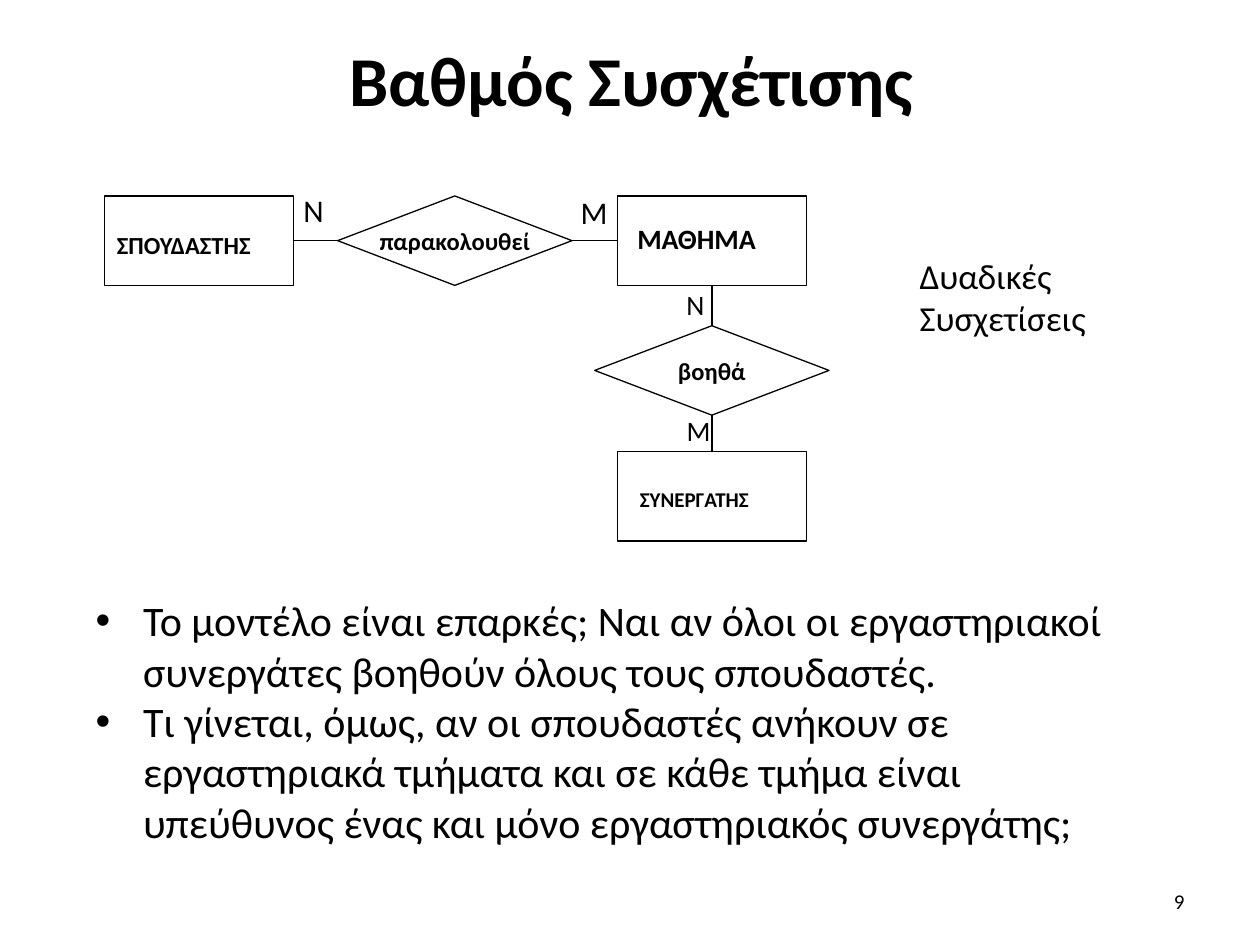
from lxml import etree
from pptx import Presentation
from pptx.dml.color import RGBColor
from pptx.enum.shapes import MSO_CONNECTOR, MSO_SHAPE
from pptx.enum.text import MSO_ANCHOR, MSO_AUTO_SIZE, PP_ALIGN
from pptx.oxml.ns import qn
from pptx.util import Inches, Pt

BLACK = RGBColor(0x00, 0x00, 0x00)
RECT, DIAMOND = MSO_SHAPE.RECTANGLE, MSO_SHAPE.DIAMOND
STRAIGHT = MSO_CONNECTOR.STRAIGHT
LEFT, CENTER, RIGHT = PP_ALIGN.LEFT, PP_ALIGN.CENTER, PP_ALIGN.RIGHT
TOP, MIDDLE = MSO_ANCHOR.TOP, MSO_ANCHOR.MIDDLE
NO_FIT = MSO_AUTO_SIZE.NONE
SITE_TOP, SITE_LEFT, SITE_BOTTOM, SITE_RIGHT = range(4)

# The slide is a grid of 100 columns by 75 rows
COLS, ROWS = 100, 75
ENTITY = (15, 7.1)
RELATION = (18.6, 7.1)


class Deck:
    font = "Calibri"
    line_width = Pt(0.75)

    def __init__(self, prs):
        self.col = prs.slide_width / COLS
        self.row = prs.slide_height / ROWS
        self.s = prs.slides.add_slide(prs.slide_layouts[1])

    def box(self, x, y, w, h):
        return (round(x * self.col), round(y * self.row),
                round(w * self.col), round(h * self.row))

    def fill_text(self, sp, lines, size, bold=False, align=LEFT, anchor=TOP, wrap=True):
        tf = sp.text_frame
        tf.auto_size = NO_FIT
        tf.word_wrap = wrap
        tf.vertical_anchor = anchor
        for i, line in enumerate(lines):
            p = tf.add_paragraph() if i else tf.paragraphs[0]
            p.alignment = align
            p.space_before = Pt(0)
            r = p.add_run()
            r.text = line
            r.font.name = self.font
            r.font.size = Pt(size)
            r.font.bold = bold
            r.font.color.rgb = BLACK

    def placeholder(self, idx, area, lines, size, **style):
        sp = self.s.placeholders[idx]
        sp.left, sp.top, sp.width, sp.height = self.box(*area)
        self.fill_text(sp, lines, size, **style)

    def text(self, area, lines, size, **style):
        sp = self.s.shapes.add_textbox(*self.box(*area))
        self.fill_text(sp, lines, size, **style)

    def outline(self, kind, cx, cy, size):
        w, h = size
        sp = self.s.shapes.add_shape(kind, *self.box(cx - w / 2, cy - h / 2, w, h))
        sp.shadow.inherit = False
        sp.fill.background()
        sp.line.color.rgb = BLACK
        sp.line.width = self.line_width
        return sp

    def entity(self, cx, cy, name, size, area):
        sp = self.outline(RECT, cx, cy, ENTITY)
        self.text(area, [name], size, bold=True, wrap=False)
        return sp

    def relation(self, cx, cy, name):
        sp = self.outline(DIAMOND, cx, cy, RELATION)
        self.fill_text(sp, [name], 14, bold=True, align=CENTER, anchor=MIDDLE, wrap=False)
        return sp

    def link(self, start, start_site, end, end_site):
        c = self.s.shapes.add_connector(STRAIGHT, 0, 0, 0, 0)
        c.begin_connect(start, start_site)
        c.end_connect(end, end_site)
        c.line.color.rgb = BLACK
        c.line.width = self.line_width
        etree.SubElement(c._element.spPr, qn("a:effectLst"))


def main():
    prs = Presentation()
    prs.slide_width, prs.slide_height = Inches(10), Inches(7.5)
    d = Deck(prs)

    # Title and list
    d.placeholder(0, (5.1, 1.3, 90, 9.9), ["Βαθμός Συσχέτισης"], 40,
                  bold=True, align=CENTER, anchor=MIDDLE)
    d.placeholder(1, (6.6, 46.7, 85, 23.3), [
        "Το μοντέλο είναι επαρκές; Ναι αν όλοι οι εργαστηριακοί "
        "συνεργάτες βοηθούν όλους τους σπουδαστές.",
        "Τι γίνεται, όμως, αν οι σπουδαστές ανήκουν σε εργαστηριακά "
        "τμήματα και σε κάθε τμήμα είναι υπεύθυνος ένας και μόνο "
        "εργαστηριακός συνεργάτης;"], 24)

    # Entities and relations share one horizontal and one vertical axis
    axis_x, axis_y = 56.5, 19.1
    student = d.entity(15.8, axis_y, "ΣΠΟΥΔΑΣΤΗΣ", 14, (8.3, 17.8, 13.5, 4.1))
    course = d.entity(axis_x, axis_y, "ΜΑΘΗΜΑ", 16, (49.6, 17.1, 12.3, 4.5))
    assistant = d.entity(axis_x, 39.4, "ΣΥΝΕΡΓΑΤΗΣ", 12, (49.8, 38.1, 11.4, 3.7))
    attends = d.relation(36.1, axis_y, "παρακολουθεί")
    helps = d.relation(axis_x, 29.4, "βοηθά")

    # Links
    d.link(attends, SITE_LEFT, student, SITE_RIGHT)
    d.link(course, SITE_LEFT, attends, SITE_RIGHT)
    d.link(helps, SITE_TOP, course, SITE_BOTTOM)
    d.link(assistant, SITE_TOP, helps, SITE_BOTTOM)

    # Cardinalities
    for x, y, w, h, mark, size in [(23.1, 14.7, 3.9, 4.9, "Ν", 18),
                                   (45.1, 14.8, 4.4, 4.9, "Μ", 18),
                                   (53.5, 22.3, 3.7, 4.5, "Ν", 16),
                                   (53.5, 32.3, 4.2, 4.5, "Μ", 16)]:
        d.text((x, y, w, h), [mark], size, wrap=False)

    # Side caption and page number
    d.text((72, 19.7, 22.1, 11.1), ["Δυαδικές", "Συσχετίσεις"], 20)
    d.text((71.7, 69.5, 23.3, 4), ["9"], 12, align=RIGHT, anchor=MIDDLE)

    prs.save("out.pptx")


if __name__ == "__main__":
    main()
